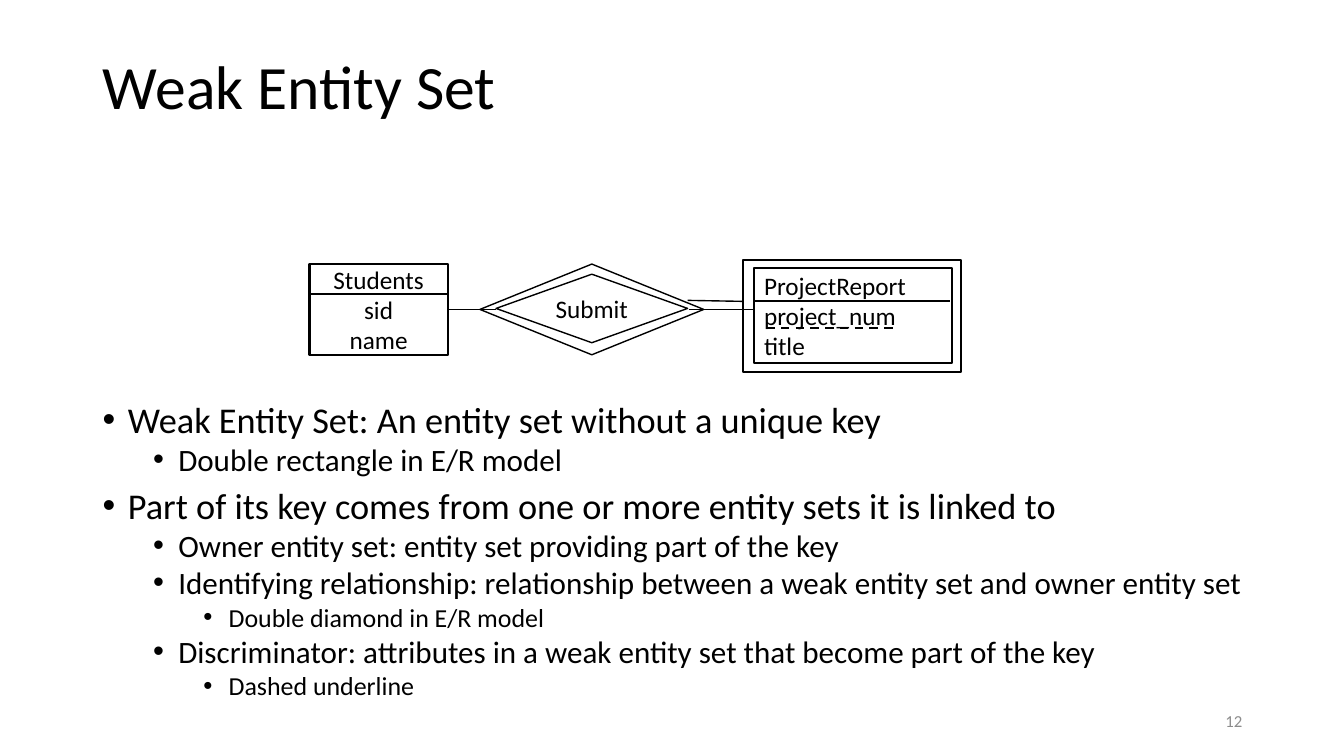
import pptx
import pptx.util
import pptx.dml.color
import pptx.enum.dml
import pptx.enum.shapes
import pptx.enum.text
import pptx.oxml

PX = 9144  # 100 px to the inch
COLORS = {"ink": "000000", "paper": "FFFFFF", "number": "8C8C8C"}
ALIGN = pptx.enum.text.PP_ALIGN
MIDDLE = pptx.enum.text.MSO_ANCHOR.MIDDLE
SHAPES = pptx.enum.shapes.MSO_SHAPE

presentation = pptx.Presentation()
presentation.slide_width = 1333 * PX
presentation.slide_height = 750 * PX
slide = presentation.slides.add_slide(presentation.slide_layouts[5])


def rgb(name):
    return pptx.dml.color.RGBColor.from_string(COLORS[name])


def format_paragraph(paragraph, size, align=ALIGN.LEFT, color="ink"):
    paragraph.alignment = align
    for run in paragraph.runs:
        run.font.name = "Calibri"
        run.font.size = pptx.util.Pt(size)
        run.font.color.rgb = rgb(color)


# Title
title = slide.shapes.title
title.left, title.top, title.width, title.height = [n * PX for n in (92, 40, 1150, 97)]
title.text_frame.text = "Weak Entity Set"
title.text_frame.auto_size = pptx.enum.text.MSO_AUTO_SIZE.NONE
title.text_frame.vertical_anchor = MIDDLE
title.text_frame.paragraphs[0].line_spacing = 0.9
format_paragraph(title.text_frame.paragraphs[0], 44)

# Bulleted definitions: level, text
definitions = [
    (0, "Weak Entity Set: An entity set without a unique key"),
    (1, "Double rectangle in E/R model"),
    (0, "Part of its key comes from one or more entity sets it is linked to"),
    (1, "Owner entity set: entity set providing part of the key"),
    (1, "Identifying relationship: relationship between a weak entity set and owner entity set"),
    (2, "Double diamond in E/R model"),
    (1, "Discriminator: attributes in a weak entity set that become part of the key"),
    (2, "Dashed underline"),
]
LEVEL_SIZES = [25.9, 22.2, 18.5]
LEVEL_SPACING = [10, 5, 5]
body = slide.shapes.add_textbox(92 * PX, 398 * PX, 1150 * PX, 331 * PX)
body.text_frame.word_wrap = True
body.text_frame.text = "\n".join(text for level, text in definitions)
for paragraph, (level, text) in zip(body.text_frame.paragraphs, definitions):
    paragraph.level = level
    paragraph.line_spacing = 0.8
    paragraph.space_before = pptx.util.Pt(LEVEL_SPACING[level])
    format_paragraph(paragraph, LEVEL_SIZES[level])
    properties = paragraph._p.get_or_add_pPr()
    properties.set("marL", str((25 + 50 * level) * PX))
    properties.set("indent", str(-25 * PX))
    for tag in ('buFont typeface="Arial"', 'buChar char="•"'):
        properties.append(pptx.oxml.parse_xml(
            f'<a:{tag} xmlns:a="http://schemas.openxmlformats.org/drawingml/2006/main"/>'))

# Entity boxes and relationship diamonds: preset, box, line width, fill, align, text
# (\v is a line break)
diagram_shapes = [
    (SHAPES.RECTANGLE, (307, 262, 137, 90), 1.5, None, ALIGN.CENTER, "Students\vsid\vname"),
    (SHAPES.RECTANGLE, (748, 266, 196, 94), 1.5, None, ALIGN.LEFT,
     "ProjectReport\vproject_num\vtitle"),
    (SHAPES.DIAMOND, (492, 272, 190, 68), 1, "paper", ALIGN.CENTER, "Submit"),
    (SHAPES.RECTANGLE, (737, 258, 216, 111), 1.5, None, ALIGN.LEFT, ""),
    (SHAPES.DIAMOND, (476, 262, 222, 90), 1, None, ALIGN.LEFT, ""),
]
for preset, box, weight, fill, align, text in diagram_shapes:
    shape = slide.shapes.add_shape(preset, *[n * PX for n in box])
    shape.shadow.inherit = False
    if fill:
        shape.fill.solid()
        shape.fill.fore_color.rgb = rgb(fill)
    else:
        shape.fill.background()
    shape.line.color.rgb = rgb("ink")
    shape.line.width = pptx.util.Pt(weight)
    if text:
        shape.text_frame.text = text
        shape.text_frame.word_wrap = False
        shape.text_frame.vertical_anchor = MIDDLE
        format_paragraph(shape.text_frame.paragraphs[0], 18, align)

# Links, header rules and the dashed underline: ends, line width, dashed
diagram_lines = [
    ((444, 307, 492, 307), 1, False),
    ((683, 307, 747, 307), 1, False),
    ((682, 298, 737, 299), 1, False),
    ((760, 325, 888, 325), 1.5, True),
    ((444, 292, 307, 292), 1.5, False),
    ((942, 299, 747, 299), 1.5, False),
]
for ends, weight, dashed in diagram_lines:
    line = slide.shapes.add_connector(
        pptx.enum.shapes.MSO_CONNECTOR.STRAIGHT, *[n * PX for n in ends])
    line.line.color.rgb = rgb("ink")
    line.line.width = pptx.util.Pt(weight)
    if dashed:
        line.line.dash_style = pptx.enum.dml.MSO_LINE.DASH
    line._element.spPr.append(pptx.oxml.parse_xml(
        '<a:effectLst xmlns:a="http://schemas.openxmlformats.org/drawingml/2006/main"/>'))

# Slide number
number = slide.shapes.add_textbox(942 * PX, 695 * PX, 300 * PX, 40 * PX)
number.text_frame.text = "12"
number.text_frame.word_wrap = True
number.text_frame.vertical_anchor = MIDDLE
format_paragraph(number.text_frame.paragraphs[0], 12, ALIGN.RIGHT, "number")

presentation.save("out.pptx")
